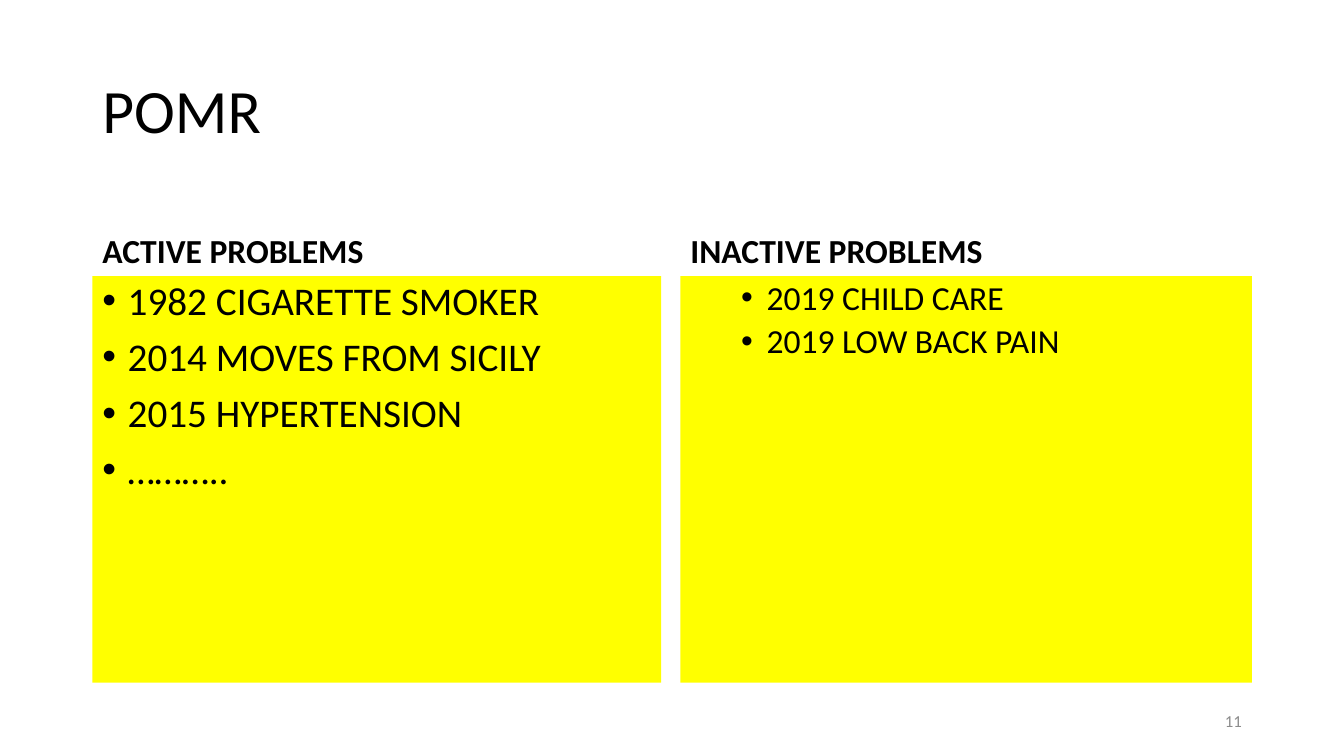
"""Build the POMR slide listing active and inactive problems."""
from dataclasses import dataclass

from lxml import etree
from pptx import Presentation
from pptx.dml.color import RGBColor
from pptx.enum.text import MSO_ANCHOR, PP_ALIGN
from pptx.oxml.ns import qn
from pptx.util import Cm, Pt

BLACK = RGBColor(0x00, 0x00, 0x00)
GREY = RGBColor(0x8C, 0x8C, 0x8C)
YELLOW = RGBColor(0xFF, 0xFF, 0x00)
TOP, MIDDLE, BOTTOM = MSO_ANCHOR.TOP, MSO_ANCHOR.MIDDLE, MSO_ANCHOR.BOTTOM
LEFT, RIGHT = PP_ALIGN.LEFT, PP_ALIGN.RIGHT
FONT = "Calibri"
MARGIN = 2.33
HEAD_TOP, HEAD_HIGH = 4.67, 2.29
LIST_TOP, LIST_HIGH = HEAD_TOP + HEAD_HIGH, 10.24
HANG = 0.64


@dataclass
class Style:
    size: int
    color: RGBColor = BLACK
    bold: bool = False
    anchor: MSO_ANCHOR = TOP
    align: PP_ALIGN = LEFT
    line: float = 0.9
    before: int = 0
    level: int = 0
    bullet: bool = False


@dataclass
class Panel:
    left: float
    width: float
    head: str
    items: list[str]
    style: Style


TITLE = Style(44, anchor=MIDDLE)
HEAD = Style(24, bold=True, anchor=BOTTOM, before=10)
NUMBER = Style(12, GREY, anchor=MIDDLE, align=RIGHT, line=1.0)
PANELS = [
    Panel(MARGIN, 14.33, "ACTIVE PROBLEMS",
          ["1982 CIGARETTE SMOKER", "2014 MOVES FROM SICILY",
           "2015 HYPERTENSION", "……….."],
          Style(28, before=10, bullet=True)),
    Panel(17.15, 14.4, "INACTIVE PROBLEMS",
          ["2019 CHILD CARE", "2019 LOW BACK PAIN"],
          Style(24, before=5, level=1, bullet=True)),
]


def add_bullet(para, level: int) -> None:
    """Give a paragraph a hanging round bullet."""
    props = para._p.get_or_add_pPr()
    props.set("marL", str(Cm(HANG * (1 + 2 * level))))
    props.set("indent", str(-Cm(HANG)))
    etree.SubElement(props, qn("a:buFont")).set("typeface", "Arial")
    etree.SubElement(props, qn("a:buChar")).set("char", "•")


def add_text(slide, left: float, top: float, width: float, high: float,
             lines: list[str], style: Style):
    """Add a text box with one paragraph per line."""
    box = slide.shapes.add_textbox(Cm(left), Cm(top), Cm(width), Cm(high))
    frame = box.text_frame
    frame.word_wrap = True
    frame.vertical_anchor = style.anchor
    frame.text = "\n".join(lines)
    for para in frame.paragraphs:
        if style.bullet:
            add_bullet(para, style.level)
        para.level = style.level
        para.alignment = style.align
        para.line_spacing = style.line
        para.space_before = Pt(style.before)
        font = para.font
        font.name, font.size, font.bold = FONT, Pt(style.size), style.bold
        font.color.rgb = style.color
    return box


def add_panel(slide, panel: Panel) -> None:
    """Add a heading and its yellow list."""
    add_text(slide, panel.left, HEAD_TOP, panel.width, HEAD_HIGH,
             [panel.head], HEAD)
    body = add_text(slide, panel.left, LIST_TOP, panel.width, LIST_HIGH,
                    panel.items, panel.style)
    body.fill.solid()
    body.fill.fore_color.rgb = YELLOW


def main() -> None:
    """Build and save the slide."""
    deck = Presentation()
    deck.slide_width, deck.slide_height = Cm(33.87), Cm(19.05)
    slide = deck.slides.add_slide(deck.slide_layouts[6])
    add_text(slide, MARGIN, 1.02, 29.21, 3.68, ["POMR"], TITLE)
    for panel in PANELS:
        add_panel(slide, panel)
    add_text(slide, 23.93, 17.65, 7.62, 1.02, ["11"], NUMBER)
    deck.save("out.pptx")


if __name__ == "__main__":
    main()
